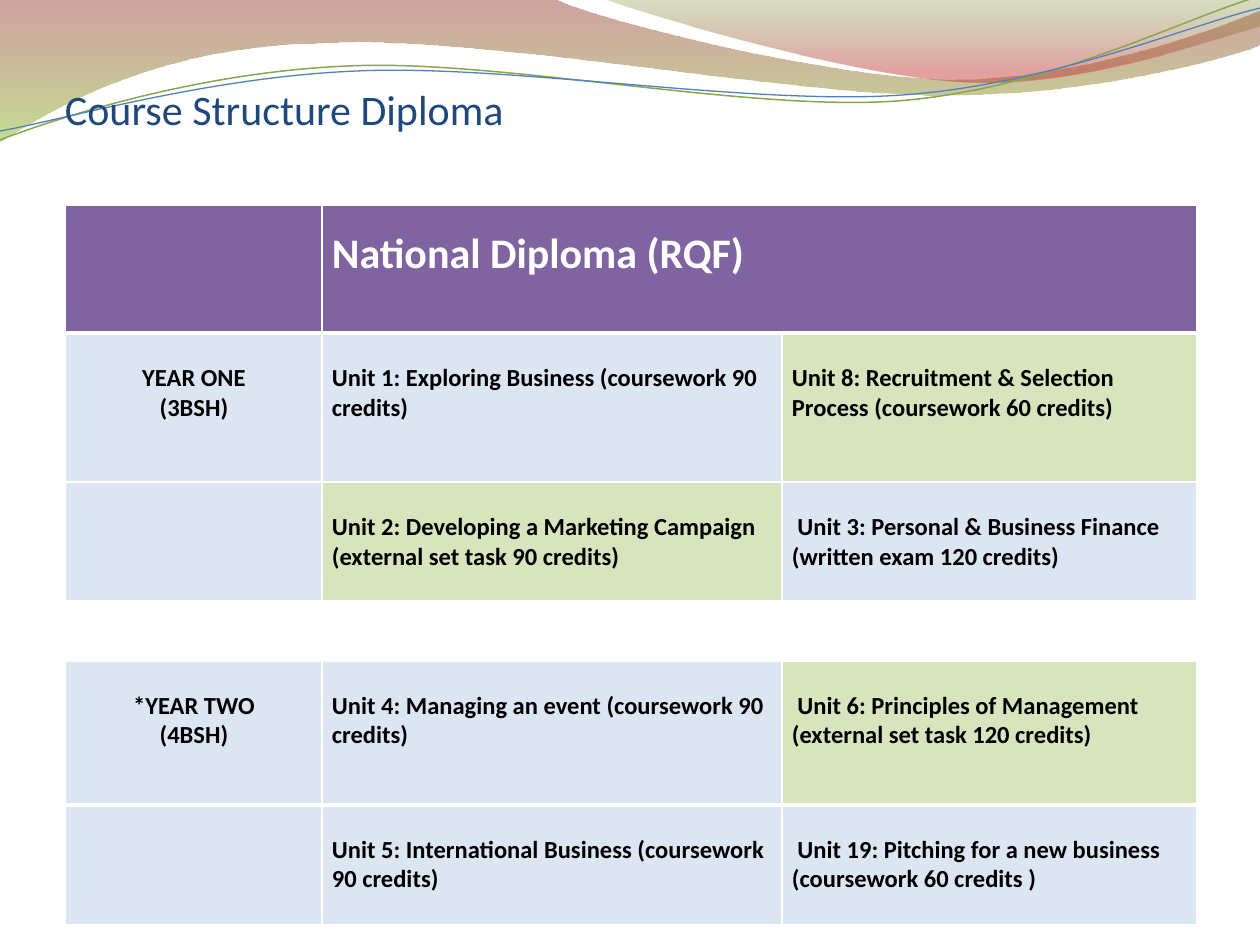
import math

import pptx
import pptx.dml.color
import pptx.enum.text
import pptx.oxml
import pptx.oxml.ns
import pptx.util

PX = 914400 / 126
FONT = "Calibri"
COLORS = {
    "white": "FFFFFF", "black": "000000", "title": "1F497D",
    "header": "8064A2", "blue": "DCE6F2", "green": "D7E4BD",
    "red_wave": "973330", "lime_wave": "95C238",
    "olive_wave": "769537", "rose_wave": "BE3330",
    "green_line": "89A54F", "blue_line": "4F81BD",
}
LEFT = pptx.enum.text.PP_ALIGN.LEFT
CENTER = pptx.enum.text.PP_ALIGN.CENTER

WIDE_WAVE = [
    [(0, 0)], [(554, -1)],
    [(600, 21), (837, 79), (955, 79)], [(1075, 79), (1207, 33), (1260, 11)],
    [(1261, 45)],
    [(1238, 55), (1096, 96), (940, 95)], [(784, 95), (481, 35), (324, 43)],
    [(163, 45), (58, 105), (-1, 142)],
]
RIGHT_WAVE = [
    [(604, -1)],
    [(641, 14), (859, 78), (969, 82)], [(1079, 87), (1211, 40), (1260, 26)],
    [(1260, 0)],
]
GREEN_LINE = [
    [(0, 140)],
    [(60, 117), (199, 72), (349, 66)], [(498, 59), (747, 112), (898, 101)],
    [(1050, 89), (1182, 19), (1257, -3)],
]
BLUE_LINE = [
    [(0, 131)],
    [(59, 121), (207, 77), (357, 71)], [(508, 64), (752, 106), (903, 95)],
    [(1053, 84), (1186, 26), (1260, 8)],
]
CURVE_TILT = -2.7

COLUMNS = [257, 460, 415]
ROWS = [128, 149, 119, 60, 144, 120]
THICK_EDGES = {1, 5}
COURSE = [
    [("", "header"), ("National Diploma (RQF)", "header"), ("", "header")],
    [("YEAR ONE\n(3BSH)", "blue"),
     ("Unit 1: Exploring Business (coursework 90 credits)", "blue"),
     ("Unit 8: Recruitment & Selection Process (coursework 60 credits)", "green")],
    [("", "blue"),
     ("Unit 2: Developing a Marketing Campaign (external set task 90 credits)", "green"),
     (" Unit 3: Personal & Business Finance (written exam 120 credits)", "blue")],
    [("", "white")] * 3,
    [("*YEAR TWO\n(4BSH)", "blue"),
     ("Unit 4: Managing an event (coursework 90 credits)", "blue"),
     (" Unit 6: Principles of Management (external set task 120 credits)", "green")],
    [("", "blue"),
     ("Unit 5: International Business (coursework 90 credits)", "blue"),
     (" Unit 19: Pitching for a new business (coursework 60 credits )", "blue")],
]


def px(length):
    """Turn px into EMU."""
    return pptx.util.Emu(round(length * PX))


def rgb(name):
    """Look up a named colour."""
    return pptx.dml.color.RGBColor.from_string(COLORS[name])


def style_font(paragraph, size, color, bold=False):
    """Format every run of a paragraph."""
    for run in paragraph.runs:
        run.font.name = FONT
        run.font.size = pptx.util.Pt(size)
        run.font.bold = bold
        run.font.color.rgb = rgb(color)


def turn(point, center, degrees):
    """Rotate a point clockwise about a center."""
    x, y = point[0] - center[0], point[1] - center[1]
    cos, sin = math.cos(math.radians(degrees)), math.sin(math.radians(degrees))
    return center[0] + x * cos - y * sin, center[1] + x * sin + y * cos


def add_outline(slide, box, segments, close):
    """Draw straight and cubic segments relative to the box."""
    points = [(px(box[0] + x), px(box[1] + y)) for segment in segments for x, y in segment]
    builder = slide.shapes.build_freeform(*points[0], scale=1.0)
    builder.add_line_segments(points[1:], close=close)
    outline = builder.convert_to_shape()
    outline.shadow.inherit = False
    legs = iter(list(outline._element.iter(pptx.oxml.ns.qn("a:lnTo"))))
    for segment in segments[1:]:
        parts = [next(legs) for point in segment]
        if len(parts) == 3:
            cubic = pptx.oxml.parse_xml(f'<a:cubicBezTo {pptx.oxml.ns.nsdecls("a")}/>')
            parts[0].addprevious(cubic)
            for part in parts:
                cubic.append(part[0])
                part.getparent().remove(part)
    return outline


def add_wave(slide, box, segments, stops):
    """Draw a wave with a see-through gradient from top to bottom."""
    wave = add_outline(slide, box, segments, True)
    wave.line.fill.background()
    wave.fill.gradient()
    wave.fill.gradient_angle = 270
    for stop, (position, color, opacity) in zip(wave.fill.gradient_stops, stops):
        stop.position = position
        stop.color.rgb = rgb(color)
    tints = wave._element.spPr.iter(pptx.oxml.ns.qn("a:srgbClr"))
    for tint, (position, color, opacity) in zip(list(tints), stops):
        tint.append(pptx.oxml.parse_xml(
            f'<a:alpha {pptx.oxml.ns.nsdecls("a")} val="{opacity * 1000}"/>'))


def add_curve(slide, box, segments, color, width):
    """Draw a thin open curve on a tilted frame."""
    center = (629, 73)
    level = [[turn(point, center, -CURVE_TILT) for point in segment] for segment in segments]
    curve = add_outline(slide, box, level, False)
    curve.rotation = CURVE_TILT
    curve.fill.background()
    curve.line.color.rgb = rgb(color)
    curve.line.width = pptx.util.Pt(width)


def add_banner(slide, box):
    """Place the waves and curves across the top."""
    add_wave(slide, box, WIDE_WAVE, [(0, "red_wave", 45), (1, "lime_wave", 55)])
    add_wave(slide, box, RIGHT_WAVE, [(0, "olive_wave", 30), (0.8, "rose_wave", 45)])
    add_curve(slide, box, GREEN_LINE, "green_line", 0.85)
    add_curve(slide, box, BLUE_LINE, "blue_line", 0.75)


def add_title(slide, box):
    """Place the slide title at the bottom of its box."""
    title = slide.shapes.add_textbox(*map(px, box)).text_frame
    title.word_wrap = True
    title.vertical_anchor = pptx.enum.text.MSO_ANCHOR.BOTTOM
    title.margin_left = title.margin_right = title.margin_bottom = 0
    title.text = "Course Structure Diploma"
    style_font(title.paragraphs[0], 24, "title")


def add_borders(cell, row):
    """Give a cell white borders, thicker along the thick edges."""
    widths = {"lnL": 1, "lnR": 1,
              "lnT": 3 if row in THICK_EDGES else 1,
              "lnB": 3 if row + 1 in THICK_EDGES else 1}
    properties = cell._tc.get_or_add_tcPr()
    for index, (side, width) in enumerate(widths.items()):
        border = pptx.oxml.parse_xml(
            f'<a:{side} {pptx.oxml.ns.nsdecls("a")} w="{width * 12700}"><a:solidFill>'
            f'<a:srgbClr val="{COLORS["white"]}"/></a:solidFill></a:{side}>')
        properties.insert(index, border)


def fill_cell(cell, row, column, text, color):
    """Write, colour and border one cell."""
    header = row == 0
    cell.fill.solid()
    cell.fill.fore_color.rgb = rgb(color)
    add_borders(cell, row)
    cell.margin_left, cell.margin_right = px(10), px(9)
    cell.margin_top = px((24 if header else 30) if text else 0)
    cell.margin_bottom = 0
    if not text:
        return
    cell.text_frame.text = text
    for paragraph in cell.text_frame.paragraphs:
        paragraph.alignment = LEFT if column else CENTER
        style_font(paragraph, 24 if header else 14, "white" if header else "black", True)


def add_course_table(slide, box):
    """Place the table of units by year."""
    table = slide.shapes.add_table(len(ROWS), len(COLUMNS), *map(px, box)).table
    table.first_row = table.horz_banding = False
    for column, width in zip(table.columns, COLUMNS):
        column.width = px(width)
    for row, height in zip(table.rows, ROWS):
        row.height = px(height)
    for row, units in enumerate(COURSE):
        for column, (text, color) in enumerate(units):
            fill_cell(table.cell(row, column), row, column, text, color)
    table.cell(0, 1).merge(table.cell(0, 2))


def main():
    """Build and save the slide."""
    deck = pptx.Presentation()
    deck.slide_width, deck.slide_height = px(1260), px(945)
    slide = deck.slides.add_slide(deck.slide_layouts[6])
    add_banner(slide, (0, 0, 1260, 142))
    add_course_table(slide, (65, 205, sum(COLUMNS), sum(ROWS)))
    add_title(slide, (65, -23, 1134, 157))
    deck.save("out.pptx")


if __name__ == "__main__":
    main()
